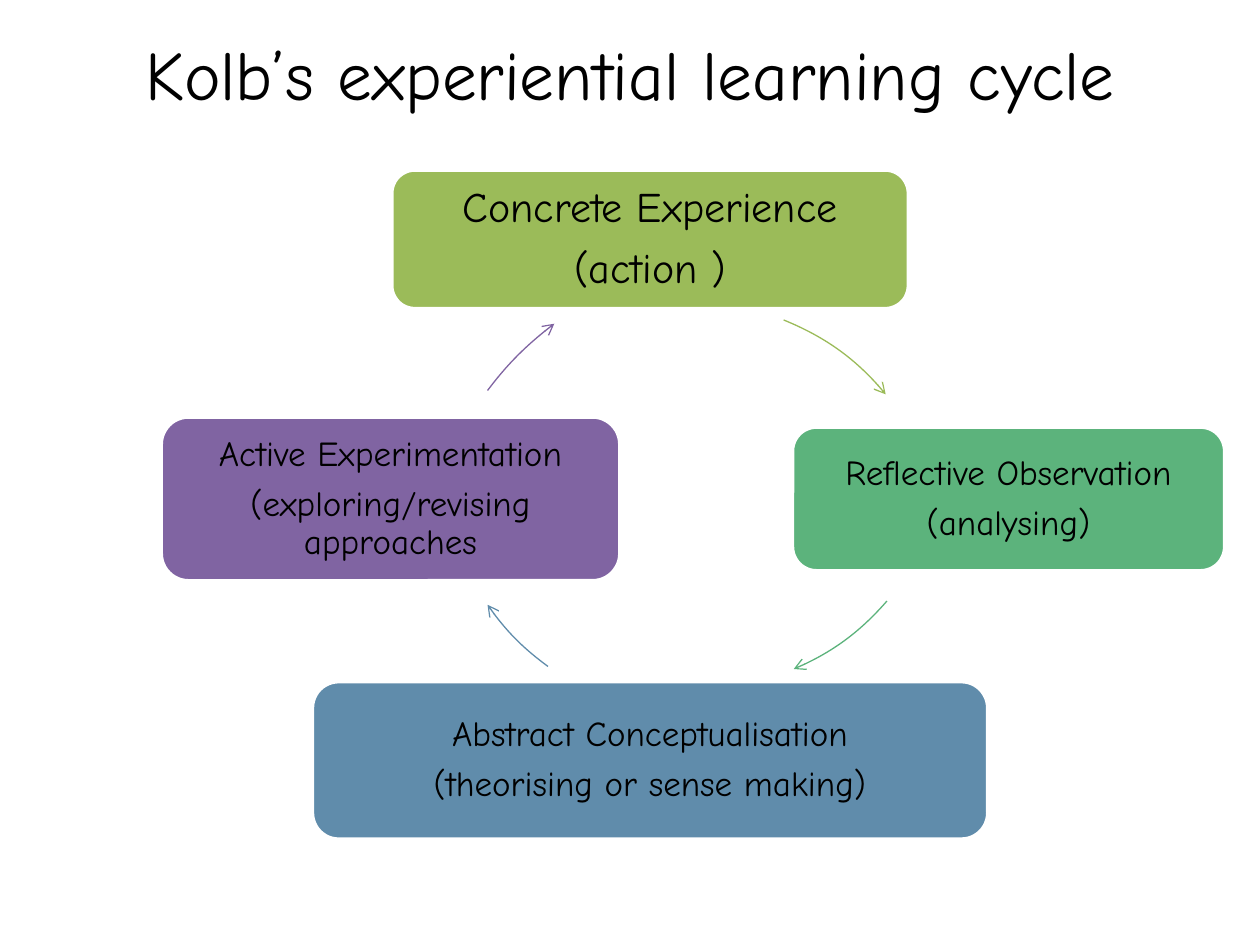
import pptx
import pptx.dml.color
import pptx.enum.shapes
import pptx.enum.text
import pptx.oxml
import pptx.oxml.ns
import pptx.util
from pptx.util import Inches

FONT = "Comic Neue"
COLORS = {
    "text": "000000",
    "outline": "FFFFFF",
    "experience": "9BBB59",
    "observation": "5CB37C",
    "conceptualisation": "608CAB",
    "experimentation": "8064A2",
}

# Stage: colour, (left, top, width, height), font size, inset, lines
STAGES = [
    ("experience", (3.11, 1.35, 4.1, 1.1), 24, 0.15,
     ["Concrete Experience", "(action )"]),
    ("observation", (6.29, 3.39, 3.43, 1.14), 20, 0.14,
     ["Reflective Observation", "(analysing)"]),
    ("conceptualisation", (2.48, 5.41, 5.36, 1.25), 20, 0.14,
     ["Abstract Conceptualisation", "(theorising or sense making)"]),
    ("experimentation", (1.28, 3.31, 3.64, 1.3), 20, 0.14,
     ["Active Experimentation", "(exploring/revising approaches"]),
]

# Arrow leaving each stage: corner of its circle's frame,
# then the start, two control points and end of the curve
ARROWS = {
    "experience": ((3.38, 2.39),
                   [(6.22, 2.54), (6.54, 2.67), (6.82, 2.87), (7.03, 3.13)]),
    "observation": ((3.42, 1.34),
                    [(7.04, 4.77), (6.84, 5), (6.59, 5.19), (6.3, 5.31)]),
    "conceptualisation": ((3.48, 1.54),
                          [(4.35, 5.29), (4.16, 5.15), (4, 4.99), (3.87, 4.8)]),
    "experimentation": ((3.51, 2.21),
                        [(3.87, 3.1), (4.02, 2.9), (4.2, 2.72), (4.4, 2.57)]),
}
CIRCLE_SIZE = Inches(4.13)
NAMESPACE = pptx.oxml.ns.nsdecls("a")


def color(name):
    return pptx.dml.color.RGBColor.from_string(COLORS[name])


def style_paragraph(paragraph, size, line_spacing):
    paragraph.alignment = pptx.enum.text.PP_ALIGN.CENTER
    paragraph.line_spacing = line_spacing
    paragraph.font.name = FONT
    paragraph.font.size = pptx.util.Pt(size)
    paragraph.font.color.rgb = color("text")


def add_title(slide, text):
    box = slide.shapes.add_textbox(Inches(0.5), Inches(0.3), Inches(9), Inches(1.25))
    frame = box.text_frame
    frame.word_wrap = True
    frame.margin_top = 0
    frame.vertical_anchor = pptx.enum.text.MSO_ANCHOR.TOP
    frame.text = text
    style_paragraph(frame.paragraphs[0], 39.6, 0.94)


def add_stage(slide, name, bounds, size, inset, lines):
    shape = slide.shapes.add_shape(
        pptx.enum.shapes.MSO_SHAPE.ROUNDED_RECTANGLE, *map(Inches, bounds))
    shape.shadow.inherit = False
    shape.fill.solid()
    shape.fill.fore_color.rgb = color(name)
    shape.line.color.rgb = color("outline")
    shape.line.width = pptx.util.Pt(2)

    frame = shape.text_frame
    frame.word_wrap = True
    frame.vertical_anchor = pptx.enum.text.MSO_ANCHOR.MIDDLE
    frame.margin_left = frame.margin_right = Inches(inset)
    frame.margin_top = frame.margin_bottom = Inches(inset)
    frame.text = "\n".join(lines)
    for paragraph in frame.paragraphs:
        style_paragraph(paragraph, size, 0.9)
        paragraph.space_after = pptx.util.Pt(size * 0.35)


def curve_xml(corner, controls):
    """Return a path with one cubic curve, relative to the frame's corner."""
    left, top = corner
    start, *others = [
        f'<a:pt x="{Inches(x - left)}" y="{Inches(y - top)}"/>'
        for x, y in controls]
    return (f'<a:path {NAMESPACE} w="{CIRCLE_SIZE}" h="{CIRCLE_SIZE}" fill="none">'
            f'<a:moveTo>{start}</a:moveTo>'
            f'<a:cubicBezTo>{"".join(others)}</a:cubicBezTo></a:path>')


def add_curved_arrow(slide, name, corner, controls):
    left, top = map(Inches, corner)
    builder = slide.shapes.build_freeform(left, top)
    builder.add_line_segments([(left + CIRCLE_SIZE, top + CIRCLE_SIZE)], close=False)
    shape = builder.convert_to_shape()
    shape.shadow.inherit = False
    shape.fill.background()
    shape.line.color.rgb = color(name)
    shape.line.width = pptx.util.Pt(0.75)
    # Curve in place of the frame's diagonal
    diagonal = shape.element.find(".//" + pptx.oxml.ns.qn("a:path"))
    diagonal.getparent().replace(
        diagonal, pptx.oxml.parse_xml(curve_xml(corner, controls)))
    # Open arrowhead at the end of the curve
    line = shape.element.find(".//" + pptx.oxml.ns.qn("a:ln"))
    line.append(pptx.oxml.parse_xml(f'<a:tailEnd {NAMESPACE} type="arrow"/>'))


def main():
    presentation = pptx.Presentation()
    presentation.slide_width = Inches(10)
    presentation.slide_height = Inches(7.5)
    slide = presentation.slides.add_slide(presentation.slide_layouts[6])

    # Title
    add_title(slide, "Kolb’s experiential learning cycle")

    # Cycle: each stage with the arrow to the next one
    for name, bounds, size, inset, lines in STAGES:
        add_stage(slide, name, bounds, size, inset, lines)
        add_curved_arrow(slide, name, *ARROWS[name])

    presentation.save("out.pptx")


if __name__ == "__main__":
    main()
